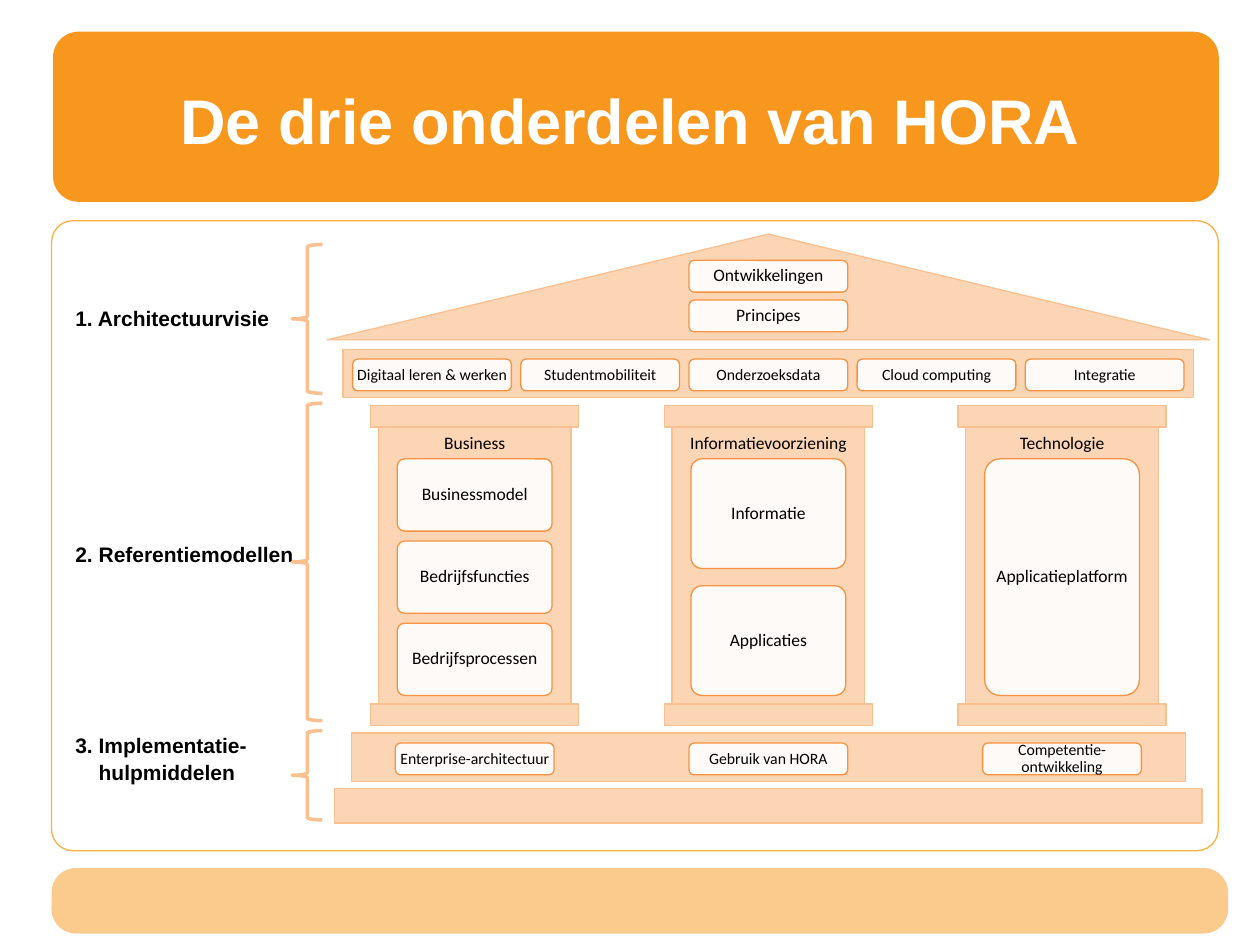
from dataclasses import dataclass

from lxml import etree
from pptx import Presentation
from pptx.dml.color import RGBColor
from pptx.enum.shapes import MSO_SHAPE
from pptx.enum.text import MSO_ANCHOR, PP_ALIGN
from pptx.oxml.ns import qn
from pptx.util import Cm, Pt

RECTANGLE = MSO_SHAPE.RECTANGLE
ROUNDED = MSO_SHAPE.ROUNDED_RECTANGLE
TRIANGLE = MSO_SHAPE.ISOSCELES_TRIANGLE
BRACE = MSO_SHAPE.LEFT_BRACE
TOP, MIDDLE = MSO_ANCHOR.TOP, MSO_ANCHOR.MIDDLE
LEFT, CENTER = PP_ALIGN.LEFT, PP_ALIGN.CENTER


@dataclass(frozen=True)
class Theme:
    orange: str = "F8971D"
    frame: str = "FBB040"
    stone: str = "FCD5B5"
    edge: str = "FAC090"
    tag_edge: str = "F69240"
    white: str = "FFFFFF"
    black: str = "000000"
    heading_font: str = "Arial"
    body_font: str = "Calibri"
    title_size: int = 36
    label_size: int = 12
    panel_size: int = 10
    tag_size: int = 9


THEME = Theme()
STONE = {"fill": THEME.stone, "line": THEME.edge}
CARD = {"fill": THEME.white, "opacity": 90, "line": THEME.tag_edge}
TAG_WIDTH, TAG_HEIGHT = 3.2, 0.64


@dataclass(frozen=True)
class Box:
    """A region in centimetres."""
    left: float
    top: float
    width: float
    height: float

    def centred(self, top, width, height, shift=0):
        """A box inside this one, shifted sideways from its centre line."""
        left = self.left + (self.width - width) / 2 + shift
        return Box(left, self.top + top, width, height)

    def lengths(self):
        return [Cm(value) for value in (self.left, self.top, self.width, self.height)]


def add_block(slide, kind, box, fill=None, opacity=100, line=None, weight=0.75, corner=None):
    shape = slide.shapes.add_shape(kind, *box.lengths())
    shape.shadow.inherit = False
    if corner is not None:
        shape.adjustments[0] = corner
    if fill:
        shape.fill.solid()
        shape.fill.fore_color.rgb = RGBColor.from_string(fill)
        if opacity < 100:
            color = shape.fill._xPr.find(qn("a:solidFill"))[0]
            etree.SubElement(color, qn("a:alpha"), val=str(opacity * 1000))
    else:
        shape.fill.background()
    if line:
        shape.line.color.rgb = RGBColor.from_string(line)
        shape.line.width = Pt(weight)
    else:
        shape.line.fill.background()
    return shape


def write(shape, text, size, font=THEME.body_font, color=THEME.black, bold=False,
          anchor=MIDDLE, align=CENTER, spacing=0.9, margins=(0.05, 0, 0.05, 0)):
    frame = shape.text_frame
    sides = ("margin_left", "margin_top", "margin_right", "margin_bottom")
    frame_format = {side: Cm(value) for side, value in zip(sides, margins)}
    frame_format.update(word_wrap=True, vertical_anchor=anchor)
    for name, value in frame_format.items():
        setattr(frame, name, value)
    paragraph = frame.paragraphs[0]
    paragraph.text = text
    paragraph.alignment = align
    paragraph.line_spacing = spacing
    for name, value in {"size": Pt(size), "name": font, "bold": bold}.items():
        setattr(paragraph.font, name, value)
    paragraph.font.color.rgb = RGBColor.from_string(color)
    return paragraph


def add_tag(slide, box, text, size=THEME.tag_size):
    write(add_block(slide, ROUNDED, box, **CARD), text, size)


def add_title(slide, box):
    banner = add_block(slide, ROUNDED, box, fill=THEME.orange, corner=0.15)
    write(banner, "De drie onderdelen van HORA", THEME.title_size, THEME.heading_font,
          THEME.white, bold=True, spacing=1, margins=(0, 0.1, 0.23, 0))


def add_roof(slide, box):
    add_block(slide, TRIANGLE, box, **STONE)
    for index, text in enumerate(("Ontwikkelingen", "Principes")):
        tag = box.centred(0.53 + 0.8 * index, TAG_WIDTH, TAG_HEIGHT)
        add_tag(slide, tag, text, THEME.panel_size)


def add_beam(slide, box, texts, pitch):
    """A stone bar with evenly spaced tags around its centre."""
    add_block(slide, RECTANGLE, box, **STONE)
    for index, text in enumerate(texts):
        shift = (index - (len(texts) - 1) / 2) * pitch
        add_tag(slide, box.centred(0.2, TAG_WIDTH, TAG_HEIGHT, shift), text)


def add_pillar(slide, box, heading, texts, gap):
    """A pillar with a capital, a foot and panels that share its shaft."""
    cap_height, panel_top, panel_area = 0.43, 1.07, 4.77
    shaft = box.centred(cap_height, 3.89, box.height - 2 * cap_height)
    write(add_block(slide, RECTANGLE, shaft, **STONE), heading, THEME.panel_size,
          anchor=TOP, margins=(0, 0.15, 0, 0))
    for top in (0, box.height - cap_height):
        add_block(slide, RECTANGLE, box.centred(top, box.width, cap_height), **STONE)
    height = (panel_area - gap * (len(texts) - 1)) / len(texts)
    for index, text in enumerate(texts):
        panel = box.centred(panel_top + index * (height + gap), 3.12, height)
        write(add_block(slide, ROUNDED, panel, corner=0.1, **CARD), text, THEME.panel_size)


def add_temple(slide, box):
    pillar_pitch = 5.92
    add_roof(slide, box.centred(0, box.width, 2.13))
    themes = ("Digitaal leren & werken", "Studentmobiliteit", "Onderzoeksdata",
              "Cloud computing", "Integratie")
    add_beam(slide, box.centred(2.32, 17.15, 0.97), themes, 3.39)
    pillars = (
        ("Business", ("Businessmodel", "Bedrijfsfuncties", "Bedrijfsprocessen"), 0.2),
        ("Informatievoorziening", ("Informatie", "Applicaties"), 0.35),
        ("Technologie", ("Applicatieplatform",), 0),
    )
    for index, pillar in enumerate(pillars):
        add_pillar(slide, box.centred(3.46, 4.19, 6.44, (index - 1) * pillar_pitch), *pillar)
    tools = ("Enterprise-architectuur", "Gebruik van HORA", "Competentie-ontwikkeling")
    add_beam(slide, box.centred(10.06, 16.81, 0.97), tools, pillar_pitch)
    add_block(slide, RECTANGLE, box.centred(11.18, 17.48, 0.69), **STONE)


def add_section_labels(slide, box):
    """Section names, each with the brace that spans its part of the temple."""
    label_height, hanging = 1.1, Cm(0.47)
    sections = (
        ("1. Architectuurvisie", 1.95, 0.48, 3.0),
        ("2. Referentiemodellen", 6.7, 3.68, 6.4),
        ("3. Implementatie-\vhulpmiddelen", 10.82, 10.28, 1.8),
    )
    for text, middle, brace_top, brace_height in sections:
        label = Box(box.left, box.top + middle - label_height / 2, 4.6, label_height)
        paragraph = write(slide.shapes.add_textbox(*label.lengths()), text,
                          THEME.label_size, THEME.heading_font, bold=True,
                          align=LEFT, spacing=1.07, margins=(0, 0, 0, 0))
        properties = paragraph._p.get_or_add_pPr()
        properties.set("marL", str(hanging))
        properties.set("indent", str(-hanging))
        brace = Box(box.left + box.width - 0.61, box.top + brace_top, 0.61, brace_height)
        add_block(slide, BRACE, brace, line=THEME.edge, weight=2)


def main():
    presentation = Presentation()
    presentation.slide_width, presentation.slide_height = Cm(25.4), Cm(19.05)
    slide = presentation.slides.add_slide(presentation.slide_layouts[6])
    add_block(slide, ROUNDED, Box(1.04, 17.5, 23.72, 1.32), fill=THEME.orange,
              opacity=50, corner=0.374)
    add_title(slide, Box(1.07, 0.64, 23.5, 3.43))
    add_block(slide, ROUNDED, Box(1.04, 4.45, 23.52, 12.7), line=THEME.frame, corner=0.034)
    add_temple(slide, Box(6.6, 4.72, 17.78, 11.87))
    add_section_labels(slide, Box(1.52, 4.45, 4.98, 12.7))
    presentation.save("out.pptx")


if __name__ == "__main__":
    main()
